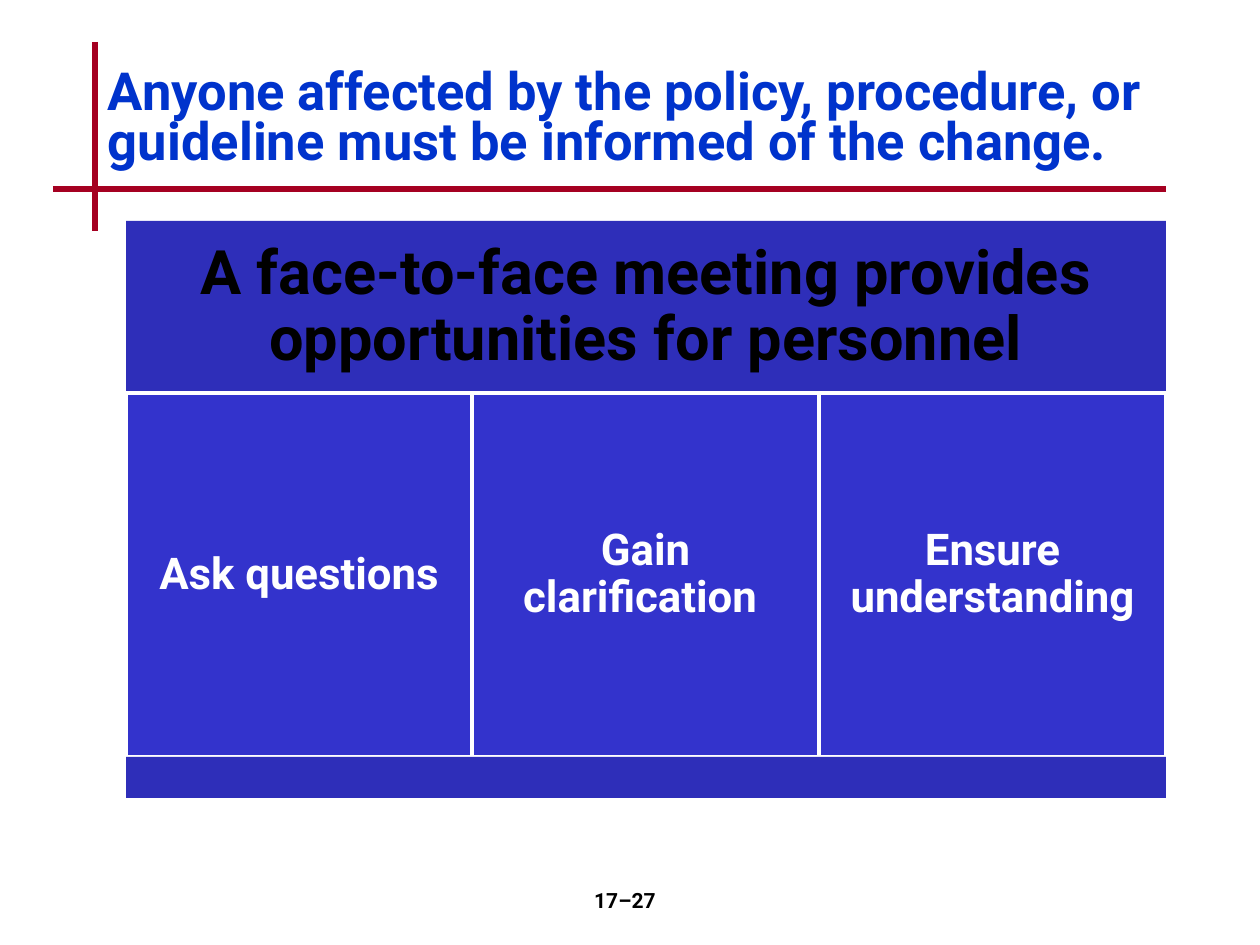
from dataclasses import dataclass
from typing import Optional

from pptx import Presentation
from pptx.dml.color import RGBColor
from pptx.enum.shapes import MSO_CONNECTOR, MSO_SHAPE
from pptx.enum.text import MSO_ANCHOR, PP_ALIGN
from pptx.oxml.ns import qn
from pptx.util import Emu, Pt
from lxml.etree import SubElement

PX = 914400 // 126
FONT = "Roboto"
RED = RGBColor(0xA5, 0x00, 0x21)
BLUE = RGBColor(0x00, 0x33, 0xCC)
BAND = RGBColor(0x2E, 0x2E, 0xB9)
CELL = RGBColor(0x33, 0x33, 0xCC)
WHITE = RGBColor(0xFF, 0xFF, 0xFF)
BLACK = RGBColor(0x00, 0x00, 0x00)


@dataclass
class Box:
    left: int
    top: int
    width: int
    height: int


@dataclass
class Label:
    text: str
    size: int
    color: RGBColor
    pad: tuple[int, int] = (13, 6)
    align: PP_ALIGN = PP_ALIGN.CENTER
    anchor: MSO_ANCHOR = MSO_ANCHOR.MIDDLE
    space: float = 0.9


def px(*nums: int) -> list[Emu]:
    return [Emu(num * PX) for num in nums]


def area(box: Box) -> list[Emu]:
    return px(box.left, box.top, box.width, box.height)


def write(shape, label: Label) -> None:
    frame = shape.text_frame
    frame.word_wrap = True
    frame.vertical_anchor = label.anchor
    side, edge = px(*label.pad)
    frame.margin_left = frame.margin_right = side
    frame.margin_top = frame.margin_bottom = edge
    para = frame.paragraphs[0]
    para.text = label.text
    para.alignment = label.align
    para.line_spacing = label.space
    font = para.font
    font.name, font.size, font.bold = FONT, Pt(label.size), True
    font.color.rgb = label.color


def rule(slide, *ends: int) -> None:
    line = slide.shapes.add_connector(MSO_CONNECTOR.STRAIGHT, *px(*ends))
    line.line.color.rgb = RED
    line.line.width = Pt(3)
    SubElement(line._element.spPr, qn("a:effectLst"))


def block(slide, box: Box, fill: RGBColor, edge: bool = False,
          label: Optional[Label] = None) -> None:
    shape = slide.shapes.add_shape(MSO_SHAPE.RECTANGLE, *area(box))
    shape.shadow.inherit = False
    shape.fill.solid()
    shape.fill.fore_color.rgb = fill
    if edge:
        shape.line.color.rgb = WHITE
        shape.line.width = Pt(2)
    else:
        shape.line.fill.background()
    if label:
        write(shape, label)


def note(slide, box: Box, label: Label) -> None:
    write(slide.shapes.add_textbox(*area(box)), label)


def main() -> None:
    deck = Presentation()
    deck.slide_width, deck.slide_height = px(1260, 945)
    slide = deck.slides.add_slide(deck.slide_layouts[6])

    # Crossed rules
    rule(slide, 95, 42, 95, 231)
    rule(slide, 53, 189, 1166, 189)

    # Header band
    left, wide = 126, 1040
    block(slide, Box(left, 221, wide, 173), BAND, label=Label(
        "A face-to-face meeting provides opportunities for personnel",
        35, BLACK, pad=(19, 19)))

    # Three equal columns
    items = ["Ask questions", "Gain clarification ", "Ensure understanding"]
    edges = [left + wide * i // len(items) for i in range(len(items) + 1)]
    for text, start, end in zip(items, edges, edges[1:]):
        block(slide, Box(start, 393, end - start, 364), CELL, edge=True,
              label=Label(text, 25, WHITE, pad=(13, 13)))

    # Footer band
    block(slide, Box(left, 757, wide, 41), BAND)

    # Title and page number
    note(slide, Box(95, 42, 1071, 157), Label(
        "Anyone affected by the policy, procedure, or guideline "
        "must be informed of the change.",
        30, BLUE, align=PP_ALIGN.LEFT, space=0.8))
    note(slide, Box(494, 882, 262, 63), Label(
        "17–27", 12, BLACK, anchor=MSO_ANCHOR.TOP, space=1.0))

    deck.save("out.pptx")


if __name__ == "__main__":
    main()
